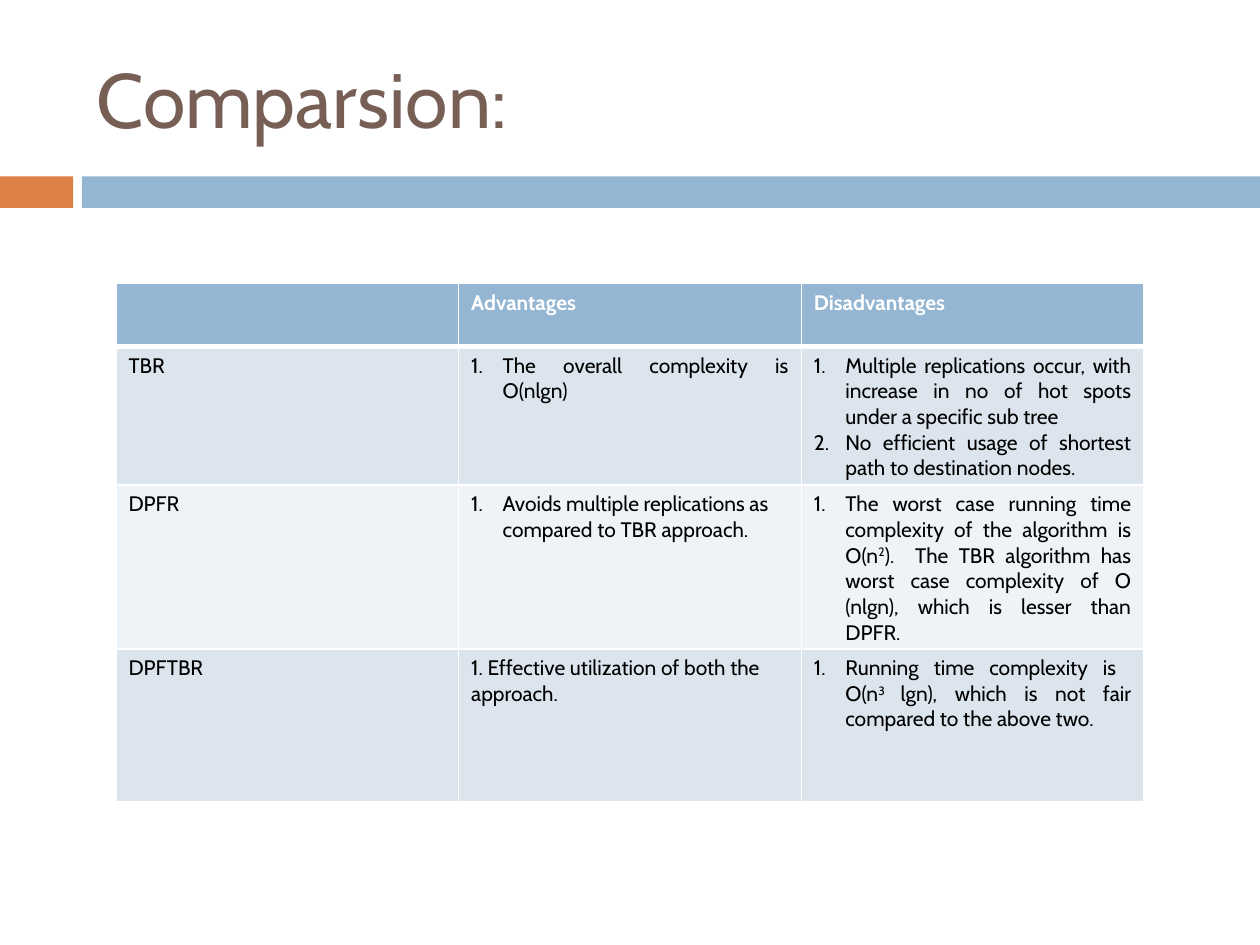
from lxml.etree import SubElement
from pptx import Presentation
from pptx.dml.color import RGBColor
from pptx.enum.shapes import MSO_SHAPE as SHAPE
from pptx.enum.text import MSO_ANCHOR as ANCHOR, PP_ALIGN as ALIGN
from pptx.oxml.ns import qn
from pptx.util import Inches, Pt

FONT = "Cabin"
WHITE, BLUE, ORANGE, BROWN = "FFFFFF", "94B6D2", "DD8047", "775F55"
BANDS = ["DCE5EE", "EEF3F7"]


def color(hex_value):
    return RGBColor.from_string(hex_value)


def add_run(p, text, size, hex_value, bold=False):
    r = p.add_run()
    r.text = text
    r.font.name, r.font.size, r.font.bold = FONT, Pt(size), bold
    r.font.color.rgb = color(hex_value)
    return r


prs = Presentation()
prs.slide_width, prs.slide_height = Inches(10), Inches(7.5)
s = prs.slides.add_slide(prs.slide_layouts[6])

# Two-colour band under the title
for left, width, fill in [(0, 0.58, ORANGE), (0.65, 9.35, BLUE)]:
    sp = s.shapes.add_shape(SHAPE.RECTANGLE, Inches(left), Inches(1.4),
                            Inches(width), Inches(0.25))
    sp.shadow.inherit = False
    sp.fill.solid()
    sp.fill.fore_color.rgb = color(fill)
    sp.line.fill.background()

# Title
title = s.shapes.add_textbox(Inches(0.67), Inches(0.3), Inches(8.83), Inches(0.95))
tf = title.text_frame
tf.word_wrap = True
tf.vertical_anchor = ANCHOR.MIDDLE
add_run(tf.paragraphs[0], "Comparsion:", 44, BROWN)

# Cell contents: "#" starts a numbered item, "^" encloses a superscript
J = ALIGN.JUSTIFY
rows = [
    (0.5, [([], None), (["Advantages"], None), (["Disadvantages"], None)]),
    (1.08, [
        (["TBR"], None),
        (["#The overall complexity is O(nlgn)"], J),
        (["#Multiple replications occur, with increase in no of hot spots "
          "under a specific sub tree",
          "#No efficient usage of shortest path to destination nodes."], J)]),
    (1.07, [
        (["DPFR"], None),
        (["#Avoids multiple replications as compared to TBR approach."], None),
        (["#The worst case running time complexity of the algorithm is "
          "O(n^2^).  The TBR algorithm has worst case complexity of O (nlgn), "
          "which is lesser than DPFR."], J)]),
    (1.21, [
        (["DPFTBR"], None),
        (["1. Effective utilization of both the approach."], None),
        (["#Running time complexity is  O(n^3 ^lgn), which is not fair "
          "compared to the above two."], J)]),
]

# Comparison table
COLS, COL_WIDTH = 3, 2.72
table = s.shapes.add_table(len(rows), COLS, Inches(0.92), Inches(2.25),
                           Inches(COLS * COL_WIDTH),
                           Inches(sum(height for height, _ in rows))).table
table.first_row = table.horz_banding = False
for col in table.columns:
    col.width = Inches(COL_WIDTH)

for i, (height, cells) in enumerate(rows):
    table.rows[i].height = Inches(height)
    header = i == 0
    for j, (items, align) in enumerate(cells):
        cell = table.cell(i, j)

        # White borders, heavier between header and body
        tc_pr = cell._tc.get_or_add_tcPr()
        for side in "LRTB":
            heavy = (i, side) in [(0, "B"), (1, "T")]
            ln = SubElement(tc_pr, qn(f"a:ln{side}"), w=str(Pt(3 if heavy else 1)))
            SubElement(SubElement(ln, qn("a:solidFill")), qn("a:srgbClr"), val=WHITE)
        cell.fill.solid()
        cell.fill.fore_color.rgb = color(BLUE if header else BANDS[(i - 1) % 2])

        # Text
        tf = cell.text_frame
        for k, item in enumerate(items):
            p = tf.add_paragraph() if k else tf.paragraphs[0]
            p.alignment = align
            if item.startswith("#"):
                p_pr = p._p.get_or_add_pPr()
                p_pr.set("marL", str(Inches(0.25)))
                p_pr.set("indent", str(Inches(-0.25)))
                SubElement(p_pr, qn("a:buFont"), typeface=FONT)
                SubElement(p_pr, qn("a:buAutoNum"), type="arabicPeriod")
            for n, part in enumerate(item.lstrip("#").split("^")):
                r = add_run(p, part, 12, WHITE if header else "000000", header)
                if n % 2:
                    r.font._element.set("baseline", "30000")

prs.save("out.pptx")
